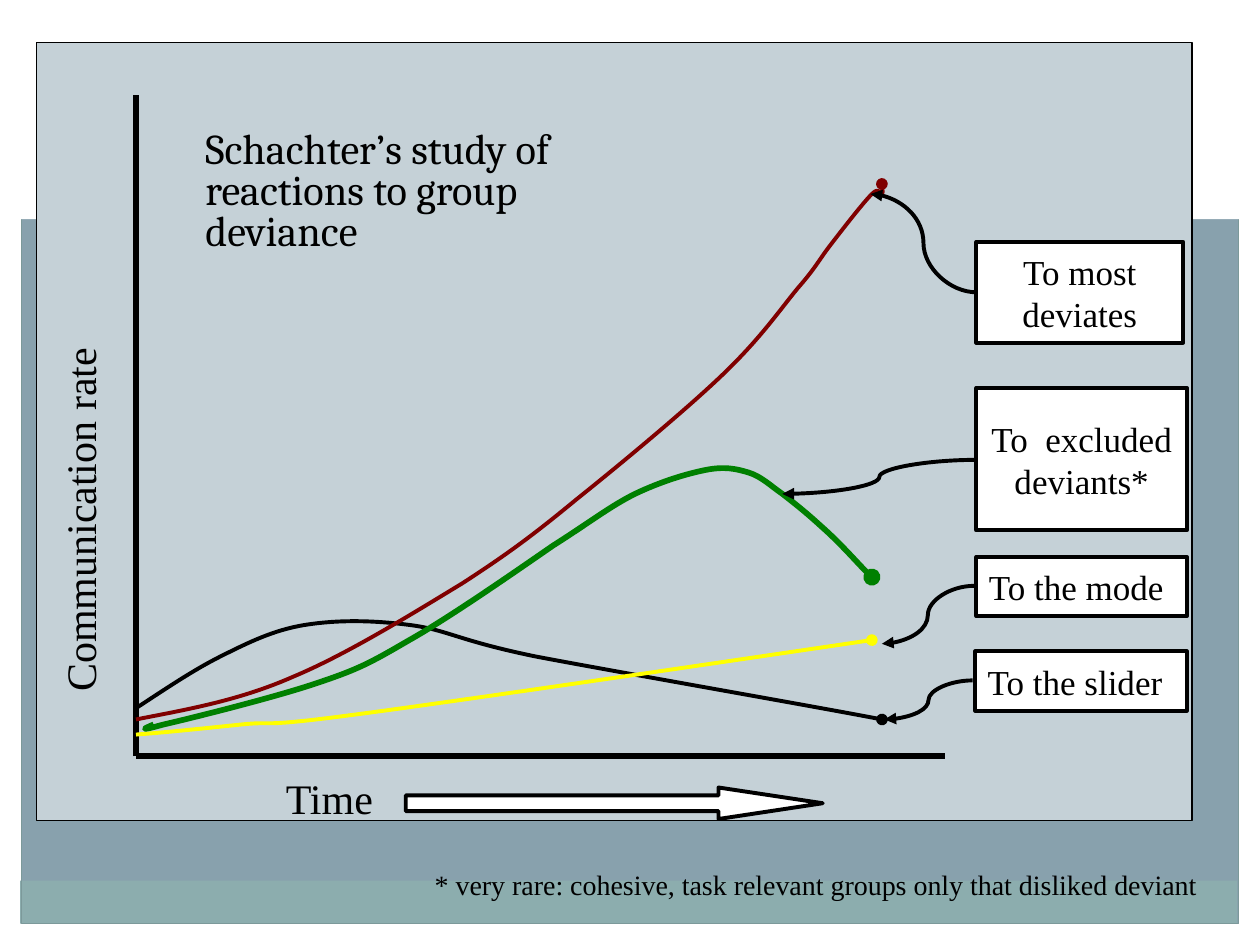
from itertools import islice
from lxml.etree import SubElement as Sub
from pptx import Presentation
from pptx.dml.color import RGBColor as Rgb
from pptx.enum.shapes import MSO_CONNECTOR as Link, MSO_SHAPE as Kind
from pptx.enum.text import MSO_ANCHOR as Anchor, MSO_AUTO_SIZE as Auto, PP_ALIGN as Align
from pptx.oxml.ns import qn
from pptx.util import Inches, Pt

HEX = {
    "back": "88A1AD", "band": "8CADAE", "edge": "7C999A", "panel": "C5D1D7",
    "white": "FFFFFF", "black": "000000", "red": "800000",
    "green": "008000", "yellow": "FFFF00",
}
SERIF = "Times New Roman"

CURVES = [
    ("black", 2.25, [
        (1.08, 5.62), (1.31, 5.47), (1.53, 5.32), (1.75, 5.21),
        (1.97, 5.1), (2.17, 5), (2.42, 4.96), (2.67, 4.92), (2.94, 4.92), (3.25, 4.96),
        (3.56, 5), (3.62, 5.08), (4.25, 5.21), (4.88, 5.33), (6.54, 5.62), (7, 5.71)]),
    ("yellow", 2.25, [
        (1.08, 5.83), (1.35, 5.81), (1.62, 5.78), (1.92, 5.75),
        (2.21, 5.72), (2, 5.78), (2.83, 5.67), (3.67, 5.56), (6.24, 5.18), (6.92, 5.08)]),
    ("red", 2.25, [
        (1.08, 5.71), (1.49, 5.63), (1.9, 5.56), (2.33, 5.37),
        (2.76, 5.19), (3.29, 4.86), (3.67, 4.63), (4.04, 4.39), (4.24, 4.24), (4.58, 3.96),
        (4.93, 3.68), (5.46, 3.24), (5.75, 2.96), (6.04, 2.68), (6.19, 2.46), (6.33, 2.29),
        (6.47, 2.13), (6.49, 2.08), (6.58, 1.96), (6.68, 1.83), (6.85, 1.61), (6.92, 1.54),
        (6.99, 1.47), (6.99, 1.56), (7, 1.54), (7.01, 1.53), (7, 1.47), (7, 1.46)]),
    ("green", 3.25, [
        (1.22, 5.75), (1.15, 5.78), (1.08, 5.81), (1.3, 5.75),
        (1.52, 5.7), (2.2, 5.53), (2.52, 5.42), (2.85, 5.31), (2.94, 5.26), (3.25, 5.08),
        (3.57, 4.9), (4.1, 4.53), (4.39, 4.33), (4.69, 4.14), (4.84, 4.02), (5.04, 3.92),
        (5.25, 3.82), (5.45, 3.76), (5.6, 3.73), (5.75, 3.7), (5.84, 3.72), (5.94, 3.75),
        (6.04, 3.78), (6.11, 3.85), (6.21, 3.92), (6.3, 3.99), (6.39, 4.06), (6.51, 4.17),
        (6.67, 4.31), (6.85, 4.52), (6.92, 4.58)]),
]

LABELS = [
    ("To most deviates", (7.75, 1.92, 1.64, 0.8), Align.CENTER, (7.75, 2.32), (6.91, 1.54)),
    ("To  excluded deviants*", (7.75, 3.08, 1.67, 1.13), Align.CENTER, (7.75, 3.65), (6.21, 3.92)),
    ("To the mode", (7.75, 4.42, 1.67, 0.47), Align.LEFT, (7.73, 4.65), (7, 5.11)),
    ("To the slider", (7.74, 5.17, 1.68, 0.47), Align.LEFT, (7.72, 5.4), (7.02, 5.71)),
]


def color(name):
    return Rgb.from_string(HEX[name])


def stroke(line, name, width, tip=None):
    line.color.rgb = color(name)
    line.width = Pt(width)
    if tip:
        Sub(line._get_or_add_ln(), qn("a:tailEnd"), type=tip)


def block(slide, box, fill=None, line=None, width=0.75, kind=Kind.RECTANGLE):
    shape = slide.shapes.add_shape(kind, *map(Inches, box))
    shape.shadow.inherit = False
    if fill:
        shape.fill.solid()
        shape.fill.fore_color.rgb = color(fill)
    else:
        shape.fill.background()
    if line:
        stroke(shape.line, line, width)
    else:
        shape.line.fill.background()
    return shape


def write(shape, text, size, font=SERIF, align=Align.LEFT, anchor=Anchor.MIDDLE, wrap=True):
    frame = shape.text_frame
    frame.text = text
    frame.word_wrap = wrap
    frame.auto_size = Auto.NONE
    frame.vertical_anchor = anchor
    para = frame.paragraphs[0]
    para.alignment = align
    face = para.runs[0].font
    face.size = Pt(size)
    face.name = font
    face.color.rgb = color("black")
    return para


def note(slide, box, text, size, **style):
    shape = slide.shapes.add_textbox(*map(Inches, box))
    write(shape, text, size, **style)
    return shape


def link(slide, start, end, width, kind=Link.STRAIGHT, tip=None):
    line = slide.shapes.add_connector(kind, *map(Inches, start + end))
    stroke(line.line, "black", width, tip)
    Sub(line.element.spPr, qn("a:effectLst"))


def curve(slide, name, width, spots):
    grid = [(round(x * 100), round(y * 100)) for x, y in spots]
    form = slide.shapes.build_freeform(*grid[0], scale=Inches(0.01))
    form.add_line_segments(grid[1:], close=False)
    shape = form.convert_to_shape()
    shape.shadow.inherit = False
    shape.fill.background()
    stroke(shape.line, name, width, "oval")
    track = next(shape.element.iter(qn("a:path")))
    steps = iter(track.findall(qn("a:lnTo")))
    while trio := list(islice(steps, 3)):
        bend = Sub(track, qn("a:cubicBezTo"))
        for step in trio:
            bend.append(step[0])
            track.remove(step)


def scene(slide):
    slide.background.fill.solid()
    slide.background.fill.fore_color.rgb = color("back")
    block(slide, (0, 7.33, 10, 0.17), "white")
    block(slide, (9.83, 0, 0.17, 7.5), "white")
    block(slide, (0, 0, 0.17, 7.5), "white")
    block(slide, (0.16, 6.99, 9.66, 0.34), "band")
    block(slide, (0.17, 0.17, 9.66, 7.16), line="edge")
    block(slide, (0, 0, 10, 1.74), "white")
    block(slide, (0.29, 0.34, 9.17, 6.17), "panel", "black")


def head(slide):
    title = slide.shapes.title
    title.left, title.top, title.width, title.height = map(Inches, (1.23, 1, 4.21, 1.08))
    para = write(title, "Schachter’s study of reactions to group deviance", 24.2,
                 font="Cambria", anchor=Anchor.TOP)
    para.line_spacing = 0.8
    para.space_before = Pt(4.8)
    para._p.get_or_add_pPr().set("marL", str(Inches(0.3)))
    title.element.getparent().append(title.element)


def axes(slide):
    for end in ((1.08, 0.75), (7.5, 6)):
        link(slide, (1.08, 6), end, 3)
    note(slide, (2.17, 6.08, 0.99, 0.5), "Time", 24, wrap=False)
    arrow = block(slide, (3.22, 6.25, 3.31, 0.25), "white", "black", 2.25, Kind.RIGHT_ARROW)
    arrow.adjustments[0] = 0.5
    arrow.adjustments[1] = 3.31
    rate = note(slide, (0.33, 1.17, 0.6, 4.42), "Communication rate", 24)
    rate.element.txBody.bodyPr.set("vert", "vert270")


def main():
    deck = Presentation()
    deck.slide_width, deck.slide_height = Inches(10), Inches(7.5)
    slide = deck.slides.add_slide(deck.slide_layouts[5])
    scene(slide)
    axes(slide)
    for name, width, spots in CURVES:
        curve(slide, name, width, spots)
    for text, box, align, start, end in LABELS:
        write(block(slide, box, "white", "black", 2.25), text, 20, align=align)
        link(slide, start, end, 2.25, Link.CURVE, "triangle")
    note(slide, (3.33, 6.83, 6.29, 0.37),
         "* very rare: cohesive, task relevant groups only that disliked deviant",
         16, align=Align.CENTER, wrap=False)
    head(slide)
    deck.save("out.pptx")


if __name__ == "__main__":
    main()
